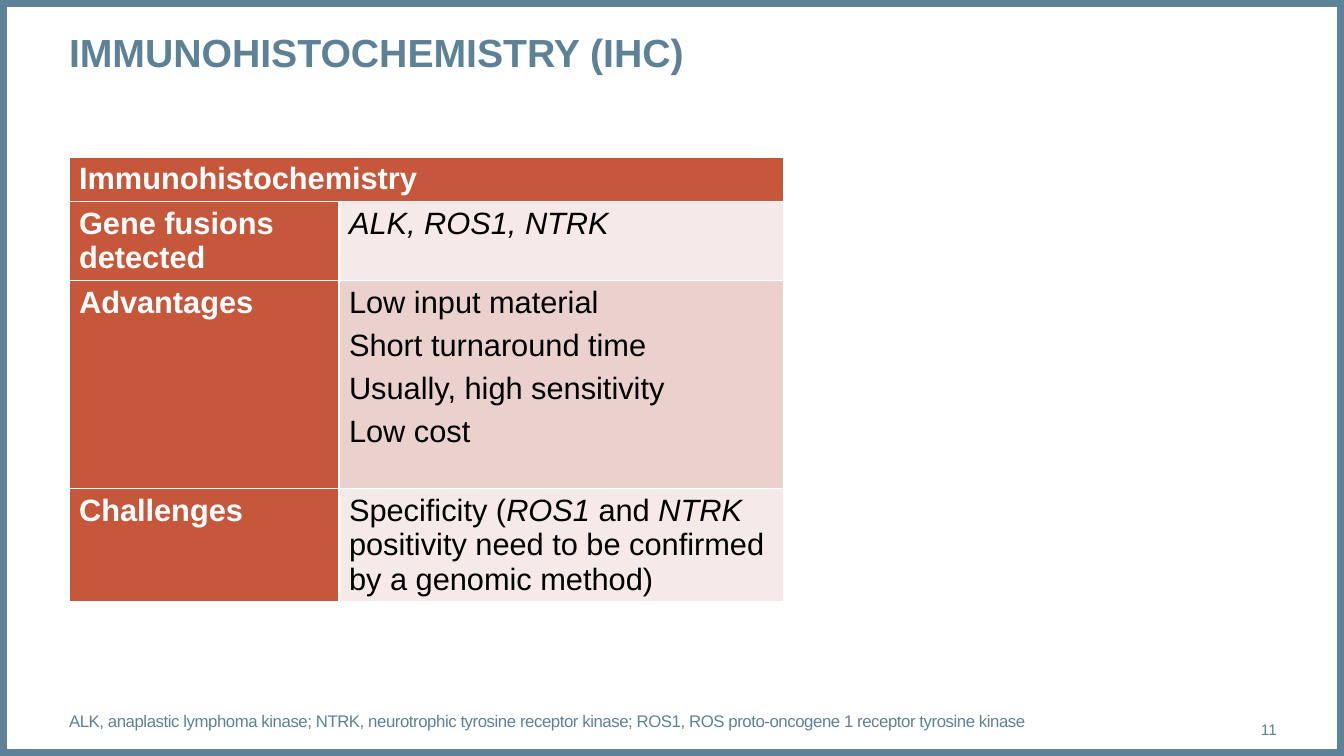
"""Build the immunohistochemistry slide with its summary table."""
from dataclasses import dataclass

from lxml.etree import SubElement
from pptx import Presentation
from pptx.dml.color import RGBColor as RGB
from pptx.enum.shapes import MSO_SHAPE as SHAPE
from pptx.enum.text import MSO_ANCHOR as ANCHOR, MSO_AUTO_SIZE as AUTO, PP_ALIGN as ALIGN
from pptx.oxml.ns import qn
from pptx.util import Emu, Pt

TITLE = "IMMUNOHISTOCHEMISTRY (IHC)"
HEADER = "Immunohistochemistry"
ROWS = [
    ("Gene fusions detected", [[("ALK, ROS1, NTRK", True)]], 0),
    ("Advantages", ["Low input material", "Short turnaround time",
                    "Usually, high sensitivity", "Low cost"], 6),
    ("Challenges", [[("Specificity (", False), ("ROS1", True), (" and ", False),
                     ("NTRK ", True),
                     ("positivity need to be confirmed by a genomic method)", False)]], 2),
]
FOOTNOTE = ("ALK, anaplastic lymphoma kinase; NTRK, neurotrophic tyrosine receptor kinase; "
            "ROS1, ROS proto-oncogene 1 receptor tyrosine kinase")
PAGE = "11"

SLIDE_W, SLIDE_H = 1344, 756
LEFT, RIGHT = 69, 1277
TABLE_TOP = 157
COL_WIDTHS = [270, 445]
ROW_HEIGHTS = [44, 79, 208, 113]


@dataclass(frozen=True)
class Theme:
    font: str = "Arial"
    slate: str = "5D8298"
    rust: str = "C6573B"
    bands: tuple = ("F5EAE8", "EAD1CE")
    white: str = "FFFFFF"
    black: str = "000000"
    title: int = 28
    table: int = 22
    note: int = 12
    page: int = 11
    frame: int = 10
    border: int = 1


T = Theme()


def px(n):
    return Emu(round(n * 914400 / 100.8))


def write(tf, paragraphs, size, color, bold=False, align=ALIGN.LEFT, after=0, spacing=0):
    tf.word_wrap = True
    for i, content in enumerate(paragraphs):
        p = tf.add_paragraph() if i else tf.paragraphs[0]
        p.alignment = align
        p.space_before, p.space_after = Pt(0), Pt(after)
        runs = [(content, False)] if isinstance(content, str) else content
        for text, italic in runs:
            r = p.add_run()
            r.text = text
            r.font.name, r.font.size = T.font, Pt(size)
            r.font.bold, r.font.italic = bold, italic
            r.font.color.rgb = RGB.from_string(color)
            if spacing:
                r.font._element.set("spc", str(round(spacing * 100)))


def place(sp, left, top, width, height, anchor):
    sp.left, sp.top, sp.width, sp.height = map(px, (left, top, width, height))
    tf = sp.text_frame
    tf.margin_left = tf.margin_right = tf.margin_top = tf.margin_bottom = 0
    tf.auto_size = AUTO.NONE
    tf.vertical_anchor = anchor
    return tf


def style_cell(cell, color):
    tc_pr = cell._tc.get_or_add_tcPr()
    for side in ("a:lnL", "a:lnR", "a:lnT", "a:lnB"):
        ln = SubElement(tc_pr, qn(side), w=str(Pt(T.border)))
        SubElement(SubElement(ln, qn("a:solidFill")), qn("a:srgbClr"), val=T.white)
    cell.fill.solid()
    cell.fill.fore_color.rgb = RGB.from_string(color)


def add_frame(s):
    sp = s.shapes.add_shape(SHAPE.RECTANGLE, 0, 0, px(SLIDE_W), px(SLIDE_H))
    sp.shadow.inherit = False
    sp.fill.background()
    sp.line.color.rgb = RGB.from_string(T.slate)
    sp.line.width = Pt(T.frame)


def add_summary(s):
    table = s.shapes.add_table(len(ROW_HEIGHTS), len(COL_WIDTHS), px(LEFT), px(TABLE_TOP),
                               px(sum(COL_WIDTHS)), px(sum(ROW_HEIGHTS))).table
    for column, width in zip(table.columns, COL_WIDTHS):
        column.width = px(width)
    for row, height in zip(table.rows, ROW_HEIGHTS):
        row.height = px(height)
    for cell in table.rows[0].cells:
        style_cell(cell, T.rust)
    table.cell(0, 0).merge(table.cell(0, 1))
    write(table.cell(0, 0).text_frame, [HEADER], T.table, T.white, bold=True)
    for i, (label, details, after) in enumerate(ROWS):
        head, body = table.rows[i + 1].cells
        style_cell(head, T.rust)
        style_cell(body, T.bands[i % 2])
        write(head.text_frame, [label], T.table, T.white, bold=True)
        write(body.text_frame, details, T.table, T.black, after=after)


def main():
    prs = Presentation()
    prs.slide_width, prs.slide_height = px(SLIDE_W), px(SLIDE_H)
    s = prs.slides.add_slide(prs.slide_layouts[1])
    add_frame(s)

    tf = place(s.shapes.title, LEFT, 28, RIGHT - LEFT, 95, ANCHOR.TOP)
    write(tf, [TITLE], T.title, T.slate, bold=True)

    add_summary(s)

    tf = place(s.placeholders[1], LEFT, 701, 1122, 40, ANCHOR.MIDDLE)
    p_pr = tf.paragraphs[0]._p.get_or_add_pPr()
    p_pr.set("marL", "0")
    p_pr.set("indent", "0")
    SubElement(p_pr, qn("a:buNone"))
    write(tf, [FOOTNOTE], T.note, T.slate, spacing=-0.3)

    page = s.shapes.add_textbox(0, 0, 0, 0)
    tf = place(page, RIGHT - 87, 709, 87, 40, ANCHOR.MIDDLE)
    write(tf, [PAGE], T.page, T.slate, align=ALIGN.RIGHT)

    prs.save("out.pptx")


if __name__ == "__main__":
    main()
